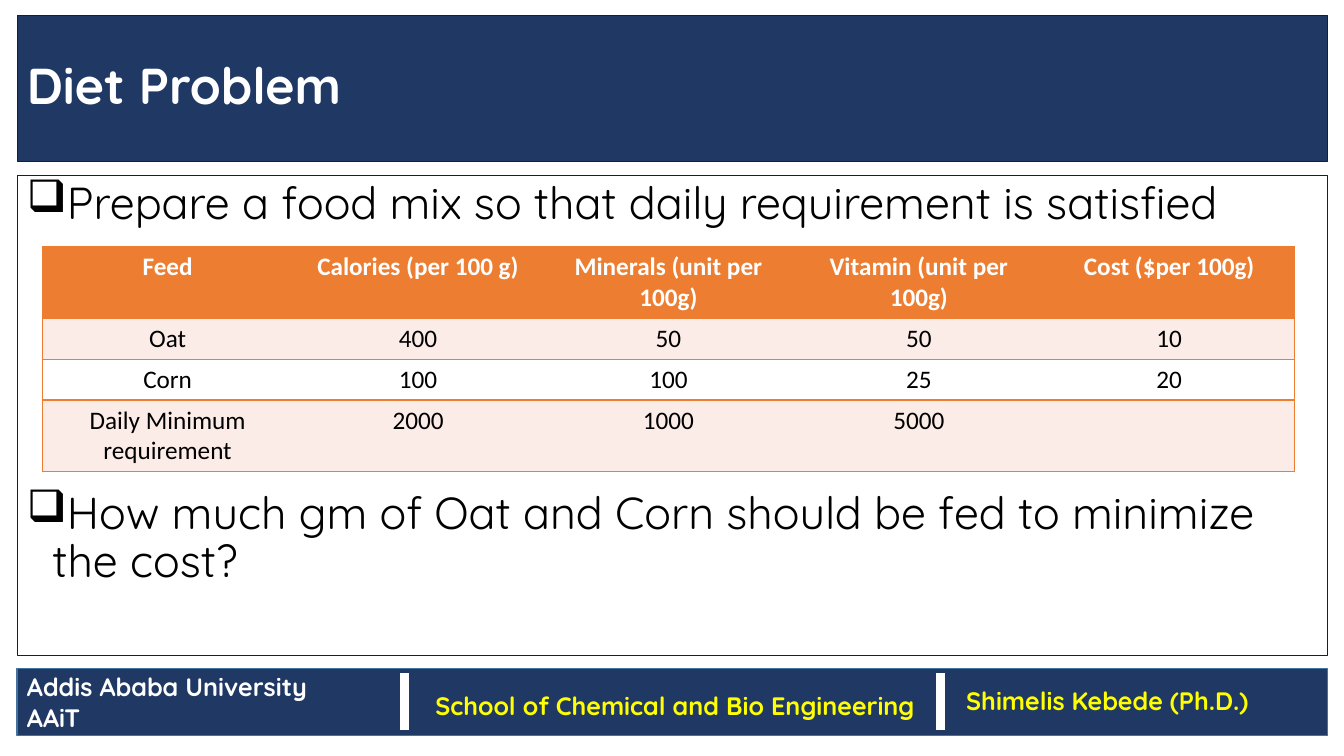
from dataclasses import dataclass

from lxml.etree import SubElement
from pptx import Presentation
from pptx.dml.color import RGBColor
from pptx.enum.shapes import MSO_CONNECTOR, MSO_SHAPE
from pptx.enum.text import MSO_ANCHOR, PP_ALIGN
from pptx.oxml import parse_xml
from pptx.oxml.ns import nsdecls, qn
from pptx.util import Cm, Pt


@dataclass(frozen=True)
class Theme:
    navy: str = "203864"
    edge: str = "002060"
    steel: str = "43739E"
    white: str = "FFFFFF"
    black: str = "000000"
    yellow: str = "FFFF00"
    orange: str = "ED7D31"
    blush: str = "FCECE8"
    font: str = "Quicksand"
    grid_font: str = "Calibri"
    title: int = 36
    body: int = 32
    small: int = 18


@dataclass(frozen=True)
class Box:
    left: float
    top: float
    width: float
    height: float

    def place(self) -> tuple:
        return Cm(self.left), Cm(self.top), Cm(self.width), Cm(self.height)


@dataclass(frozen=True)
class Label:
    text: str
    box: Box


THEME = Theme()
EDGE, WIDE = 0.43, 33.02
TITLE = Box(EDGE, 0.38, WIDE, 3.68)
BODY = Box(EDGE, 4.42, WIDE, 12.09)
FOOTER = Box(EDGE, 16.84, WIDE, 1.7)
GRID = Box(1.07, 6.22, 31.55, 5.66)
HEIGHTS = (1.8, 1.03, 1.03, 1.8)
RULES = (10.19, 23.7)
LABELS = (
    Label("School of Chemical and Bio Engineering", Box(10.72, 17.27, 12.88, 1.02)),
    Label("Shimelis Kebede (Ph.D.)", Box(24.1, 17.15, 8.38, 1.02)),
)
TASKS = (
    "Prepare a food mix so that daily requirement is satisfied",
    "How much gm of Oat and Corn should be fed to minimize the cost?",
)
FEEDS = (
    ("Feed", "Calories (per 100 g)", "Minerals (unit per 100g)",
     "Vitamin (unit per 100g)", "Cost ($per 100g)"),
    ("Oat", "400", "50", "50", "10"),
    ("Corn", "100", "100", "25", "20"),
    ("Daily Minimum requirement", "2000", "1000", "5000", ""),
)


def rgb(code: str) -> RGBColor:
    return RGBColor.from_string(code)


def write(frame, *lines: str, size: int = THEME.small, font: str = THEME.font,
          ink: str = THEME.white, bold: bool = True, align=PP_ALIGN.LEFT,
          anchor=MSO_ANCHOR.TOP, pitch: float = 1.0, gap: float = 0,
          mark: str = "") -> None:
    """Fill a frame; gap is the space between paragraphs, mark the bullet."""
    frame.word_wrap = True
    frame.vertical_anchor = anchor
    for i, line in enumerate(lines):
        para = frame.paragraphs[0] if i == 0 else frame.add_paragraph()
        if mark:
            props = para._p.get_or_add_pPr()
            props.set("marL", str(Cm(0.64)))
            props.set("indent", str(-Cm(0.64)))
            SubElement(props, qn("a:buChar")).set("char", mark)
        para.alignment = align
        para.line_spacing = pitch
        if i and gap:
            para.space_before = Pt(gap)
        run = para.add_run()
        run.text = line
        run.font.name = font
        run.font.size = Pt(size)
        run.font.bold = bold
        run.font.color.rgb = rgb(ink)


def panel(slide, box: Box, line: str, weight: float, fill: str = ""):
    shape = slide.shapes.add_shape(MSO_SHAPE.RECTANGLE, *box.place())
    shape.shadow.inherit = False
    if fill:
        shape.fill.solid()
        shape.fill.fore_color.rgb = rgb(fill)
    else:
        shape.fill.background()
    shape.line.color.rgb = rgb(line)
    shape.line.width = Pt(weight)
    return shape.text_frame


def rule(slide, x: float) -> None:
    line = slide.shapes.add_connector(
        MSO_CONNECTOR.STRAIGHT, Cm(x), Cm(16.97), Cm(x), Cm(18.39))
    line.line.color.rgb = rgb(THEME.white)
    line.line.width = Pt(6)
    SubElement(line._element.spPr, qn("a:effectLst"))


def border(cell, sides: str) -> None:
    """Draw the sides named by letter and clear the others."""
    props = cell._tc.get_or_add_tcPr()
    for i, side in enumerate("LRTB"):
        paint = (f'<a:solidFill><a:srgbClr val="{THEME.orange}"/></a:solidFill>'
                 if side in sides else "<a:noFill/>")
        props.insert(i, parse_xml(
            f'<a:ln{side} {nsdecls("a")} w="{Pt(1)}">{paint}</a:ln{side}>'))


def draw_grid(slide) -> None:
    count = len(FEEDS[0])
    table = slide.shapes.add_table(len(FEEDS), count, *GRID.place()).table
    for col in table.columns:
        col.width = Cm(GRID.width / count)
    for r, row in enumerate(FEEDS):
        table.rows[r].height = Cm(HEIGHTS[r])
        head = r == 0
        fill = THEME.orange if head else THEME.blush if r % 2 else THEME.white
        for c, text in enumerate(row):
            cell = table.cell(r, c)
            cell.fill.solid()
            cell.fill.fore_color.rgb = rgb(fill)
            border(cell, "TB" + "L" * (c == 0) + "R" * (c == count - 1))
            if text:
                write(cell.text_frame, text, font=THEME.grid_font, bold=head,
                      ink=THEME.white if head else THEME.black,
                      align=PP_ALIGN.CENTER)


def main() -> None:
    deck = Presentation()
    deck.slide_width, deck.slide_height = Cm(33.87), Cm(19.05)
    slide = deck.slides.add_slide(deck.slide_layouts[6])

    write(panel(slide, FOOTER, THEME.steel, 1, THEME.navy),
          "Addis Ababa University", "AAiT", anchor=MSO_ANCHOR.MIDDLE)
    for x in RULES:
        rule(slide, x)
    for label in LABELS:
        frame = slide.shapes.add_textbox(*label.box.place()).text_frame
        write(frame, label.text, ink=THEME.yellow)

    write(panel(slide, BODY, THEME.edge, 0.75), *TASKS, size=THEME.body,
          ink=THEME.black, bold=False, pitch=0.9, gap=187, mark="❑")
    write(panel(slide, TITLE, THEME.edge, 0.75, THEME.navy), "Diet Problem",
          size=THEME.title, pitch=0.9, anchor=MSO_ANCHOR.MIDDLE)
    draw_grid(slide)
    deck.save("out.pptx")


if __name__ == "__main__":
    main()
